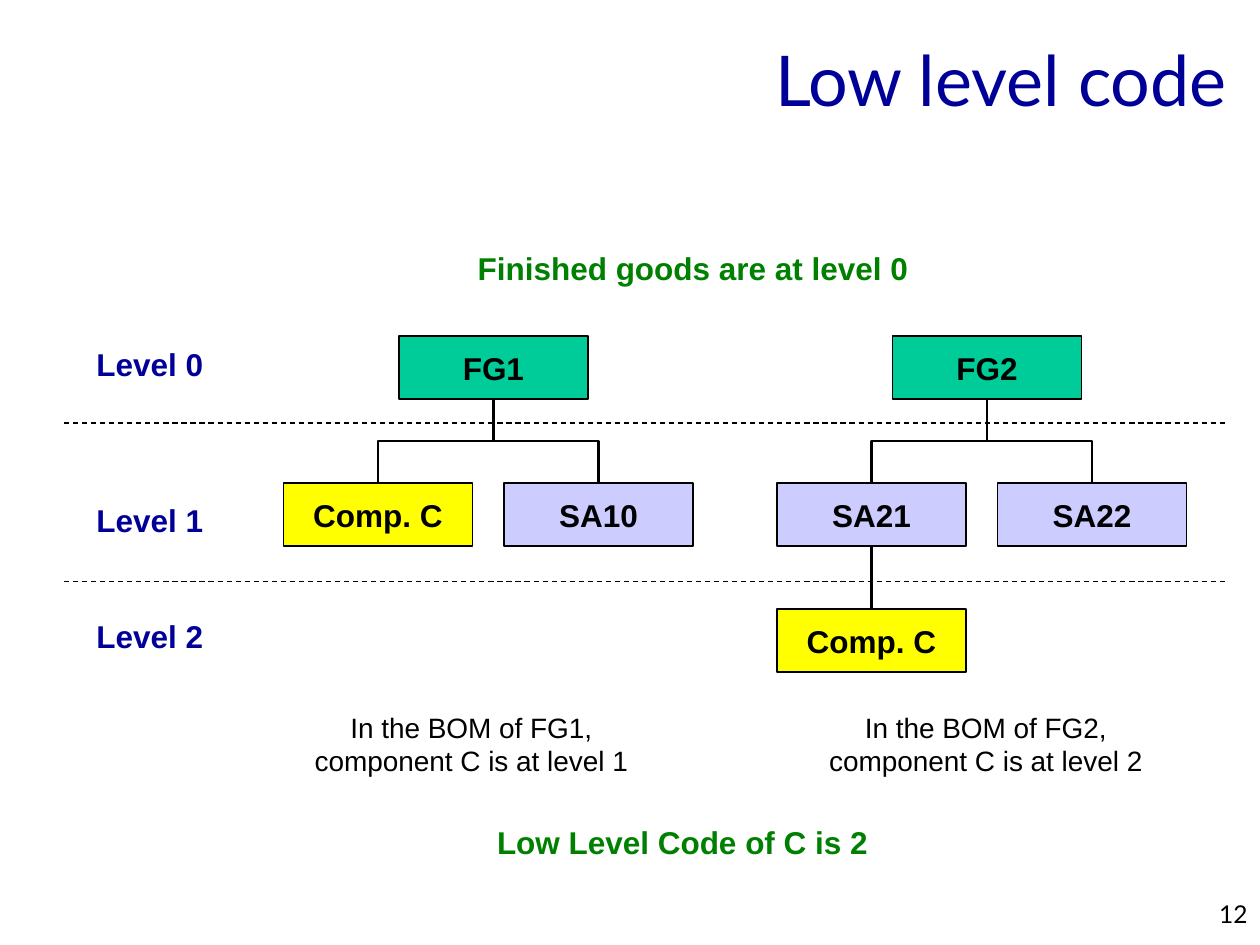
from lxml.etree import SubElement
from pptx import Presentation
from pptx.dml.color import RGBColor
from pptx.enum.dml import MSO_LINE_DASH_STYLE as Dash
from pptx.enum.shapes import MSO_CONNECTOR as Connector, MSO_SHAPE as Shape
from pptx.enum.text import MSO_ANCHOR as Anchor, PP_ALIGN as Align
from pptx.oxml.ns import qn
from pptx.util import Inches, Pt

BLACK = RGBColor(0x00, 0x00, 0x00)
NAVY = RGBColor(0x00, 0x00, 0x99)
GREEN = RGBColor(0x00, 0x80, 0x00)
TEAL = RGBColor(0x00, 0xCC, 0x99)
LAVENDER = RGBColor(0xCC, 0xCC, 0xFF)
YELLOW = RGBColor(0xFF, 0xFF, 0x00)

COLUMNS, ROWS = 120, 90
BOX_COLUMNS, BOX_ROWS = 18, 6
TOP_SITE, BOTTOM_SITE = 0, 2


def write_text(shape, text, size=18, color=BLACK, bold=False, font="Arial",
               align=Align.CENTER, anchor=Anchor.MIDDLE, wrap=False):
    """Fill the shape with one paragraph for each line of text."""
    frame = shape.text_frame
    frame.word_wrap = wrap
    frame.vertical_anchor = anchor
    frame.text = text
    for paragraph in frame.paragraphs:
        paragraph.alignment = align
        style = paragraph.font
        style.size, style.name, style.bold = Pt(size), font, bold
        style.color.rgb = color


class TreeSlide:
    """Draws on one slide; lengths are columns and rows of the grid."""

    def __init__(self, presentation):
        self.shapes = presentation.slides.add_slide(presentation.slide_layouts[6]).shapes
        self.column = presentation.slide_width / COLUMNS
        self.row = presentation.slide_height / ROWS

    def place(self, column, row):
        return round(column * self.column), round(row * self.row)

    def text(self, text, column, row, columns, rows, **style):
        box = self.shapes.add_textbox(*self.place(column, row), *self.place(columns, rows))
        write_text(box, text, **style)

    def node(self, text, column, row, fill):
        box = self.shapes.add_shape(Shape.RECTANGLE, *self.place(column, row),
                                    *self.place(BOX_COLUMNS, BOX_ROWS))
        box.shadow.inherit = False
        box.fill.solid()
        box.fill.fore_color.rgb = fill
        box.line.color.rgb = BLACK
        box.line.width = Pt(0.75)
        write_text(box, text, bold=True)
        return box

    def line(self, kind, start, end, width):
        line = self.shapes.add_connector(kind, *start, *end)
        line.line.color.rgb = BLACK
        line.line.width = Pt(width)
        SubElement(line._element.spPr, qn("a:effectLst"))
        return line

    def divider(self, row):
        line = self.line(Connector.STRAIGHT, self.place(6.1, row), self.place(116.8, row), 0.75)
        line.line.dash_style = Dash.DASH

    def link(self, parent, child):
        """Join parent to child, with a vertical-first elbow if they are not in line."""
        x1, y1 = parent.left + parent.width // 2, parent.top + parent.height
        x2, y2 = child.left + child.width // 2, child.top
        kind = Connector.STRAIGHT if x1 == x2 else Connector.ELBOW
        line = self.line(kind, (x1, y1), (x2, y2), 1.5)
        line.begin_connect(parent, BOTTOM_SITE)
        line.end_connect(child, TOP_SITE)
        if kind == Connector.ELBOW:
            self.turn(line, x1, y1, x2, y2)

    def turn(self, line, x1, y1, x2, y2):
        """Rotate an elbow a quarter turn about its centre."""
        width, height = y2 - y1, abs(x2 - x1)
        line.left, line.top = (x1 + x2 - width) // 2, (y1 + y2 - height) // 2
        line.width, line.height = width, height
        transform = line._element.spPr.find(qn("a:xfrm"))
        for flip in ("flipH", "flipV"):
            transform.attrib.pop(flip, None)
        if x2 < x1:
            transform.set("rot", str(90 * 60000))
        else:
            transform.set("rot", str(270 * 60000))
            transform.set("flipH", "1")


def main():
    presentation = Presentation()
    presentation.slide_width, presentation.slide_height = Inches(10), Inches(7.5)
    slide = TreeSlide(presentation)

    slide.text("12", 95, 85, 25, 3, size=14, font="Lato", align=Align.RIGHT,
               anchor=Anchor.TOP, wrap=True)
    slide.text("Low level code", 2, 0, 116, 15, size=40, color=NAVY, font="Lato",
               align=Align.RIGHT, wrap=True)

    for level, row in enumerate((32.3, 47.1, 58.2)):
        slide.text(f"Level {level}", 8, row, 12.6, 4.8, color=NAVY, bold=True,
                   align=Align.LEFT, anchor=Anchor.TOP)

    first_good = slide.node("FG1", 38, 32, TEAL)
    second_good = slide.node("FG2", 85, 32, TEAL)
    first_component = slide.node("Comp. C", 27, 46, YELLOW)
    assembly_10 = slide.node("SA10", 48, 46, LAVENDER)
    assembly_21 = slide.node("SA21", 74, 46, LAVENDER)
    assembly_22 = slide.node("SA22", 95, 46, LAVENDER)
    second_component = slide.node("Comp. C", 74, 58, YELLOW)

    for parent, child in ((first_good, first_component), (first_good, assembly_10),
                          (second_good, assembly_21), (second_good, assembly_22),
                          (assembly_21, second_component)):
        slide.link(parent, child)

    slide.text("Finished goods are at level 0", 44.3, 23.1, 43.4, 4.8, color=GREEN, bold=True)
    for number, column in ((1, 28.7), (2, 77.7)):
        slide.text(f"In the BOM of FG{number},\ncomponent C is at level {number}",
                   column, 67, 32.4, 7.7, size=16)
    slide.text("Low Level Code of C is 2", 46.1, 77.8, 37.8, 4.8, color=GREEN, bold=True)

    for row in (40.3, 55.4):
        slide.divider(row)

    presentation.save("out.pptx")


if __name__ == "__main__":
    main()
